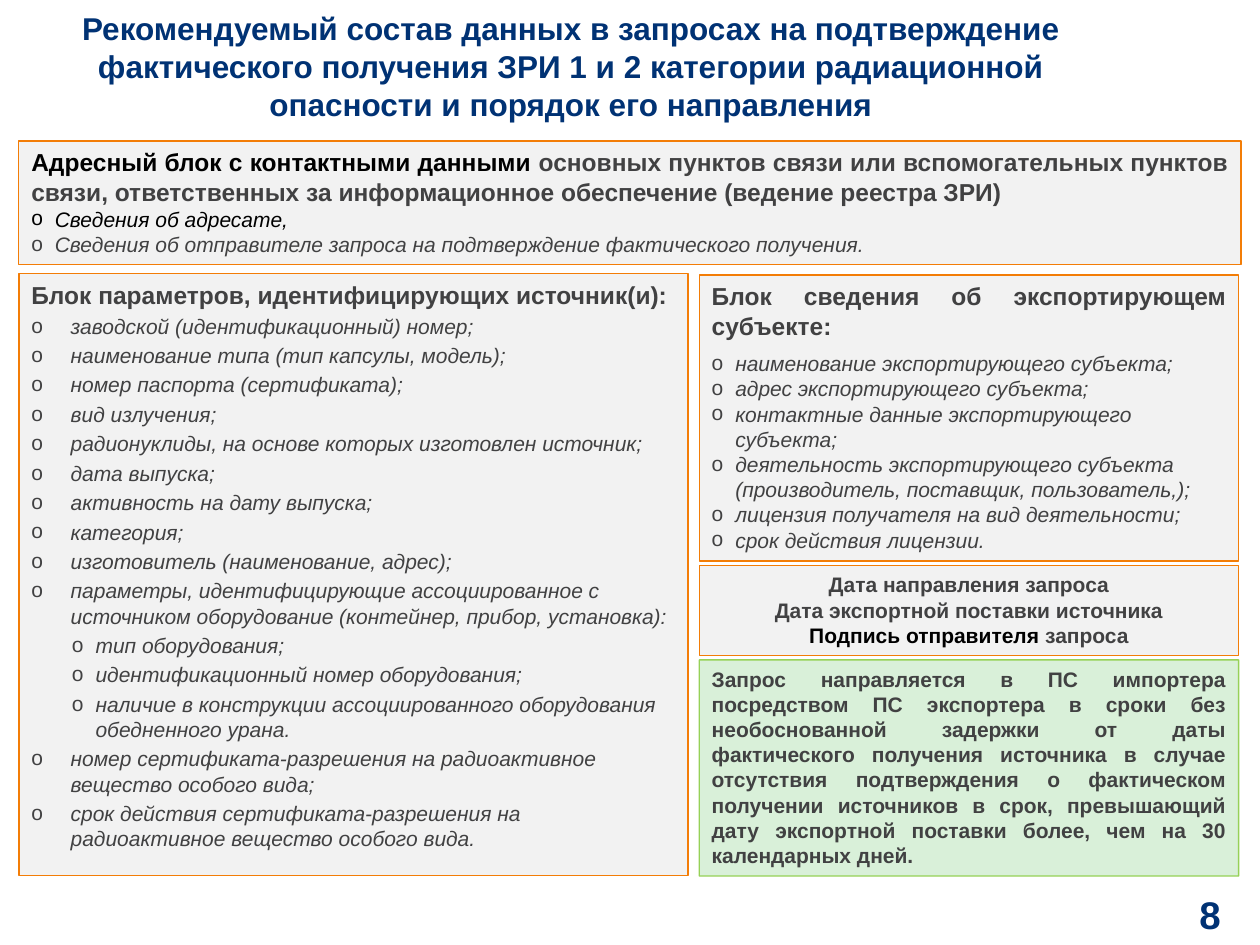
from dataclasses import dataclass
from typing import Optional

from lxml.etree import SubElement
from pptx import Presentation
from pptx.dml.color import RGBColor as RGB
from pptx.enum.shapes import MSO_SHAPE as Shape
from pptx.enum.text import MSO_ANCHOR as Anchor, MSO_AUTO_SIZE as AutoSize, PP_ALIGN as Align
from pptx.oxml.ns import qn
from pptx.util import Pt


@dataclass(frozen=True)
class Theme:
    font: str = "Arial"
    navy: str = "003274"
    black: str = "000000"
    gray: str = "414142"
    panel: str = "F2F2F2"
    orange: str = "F37D07"
    green: str = "5EC25E"
    green_line: str = "92D050"
    title: int = 18
    number: int = 22
    heading: int = 14
    body: int = 12


T = Theme()


@dataclass(frozen=True)
class Run:
    text: str
    color: str = T.gray
    size: int = T.body
    bold: bool = True
    italic: bool = False


@dataclass(frozen=True)
class Para:
    runs: list[Run]
    align: Align = Align.LEFT
    margin: float = 0
    hang: float = 0
    before: float = 0
    after: float = 0


@dataclass(frozen=True)
class Box:
    left: float
    top: float
    width: float
    height: float


@dataclass(frozen=True)
class Panel:
    box: Box
    paras: list[Para]
    fill: str = T.panel
    line: str = T.orange
    fill_alpha: Optional[int] = None
    line_alpha: Optional[int] = None


def item(text: str, margin: float = 13.5, hang: float = 13.5, before: float = 0,
         color: str = T.gray, align: Align = Align.LEFT) -> Para:
    return Para([Run(text, color, bold=False, italic=True)], align, margin, hang, before)


def heading(text: str, align: Align = Align.LEFT, after: float = 0) -> Para:
    return Para([Run(text, size=T.heading)], align, after=after)


def write(tf, paras: list[Para]) -> None:
    for i, para in enumerate(paras):
        p = tf.add_paragraph() if i else tf.paragraphs[0]
        p.alignment = para.align
        if para.before:
            p.space_before = Pt(para.before)
        if para.after:
            p.space_after = Pt(para.after)
        if para.hang:
            pPr = p._p.get_or_add_pPr()
            pPr.set("marL", str(Pt(para.margin)))
            pPr.set("indent", str(-Pt(para.hang)))
            SubElement(pPr, qn("a:buFont")).set("typeface", T.font)
            SubElement(pPr, qn("a:buChar")).set("char", "o")
        for run in para.runs:
            r = p.add_run()
            r.text = run.text
            f = r.font
            f.name, f.size, f.bold, f.italic = T.font, Pt(run.size), run.bold, run.italic
            f.color.rgb = RGB.from_string(run.color)


def place(b: Box) -> tuple:
    return Pt(b.left), Pt(b.top), Pt(b.width), Pt(b.height)


def set_alpha(parent, percent: Optional[int]) -> None:
    if percent is not None:
        color = parent.find(qn("a:solidFill")).find(qn("a:srgbClr"))
        SubElement(color, qn("a:alpha")).set("val", str(percent * 1000))


def add_label(s, box: Box, para: Para) -> None:
    tf = s.shapes.add_textbox(*place(box)).text_frame
    tf.word_wrap = True
    tf.vertical_anchor = Anchor.MIDDLE
    tf.margin_left = tf.margin_right = tf.margin_top = tf.margin_bottom = 0
    write(tf, [para])


def add_panel(s, panel: Panel) -> None:
    sp = s.shapes.add_shape(Shape.RECTANGLE, *place(panel.box))
    sp.shadow.inherit = False
    sp.fill.solid()
    sp.fill.fore_color.rgb = RGB.from_string(panel.fill)
    sp.line.color.rgb = RGB.from_string(panel.line)
    sp.line.width = Pt(0.75)
    spPr = sp._element.spPr
    set_alpha(spPr, panel.fill_alpha)
    set_alpha(spPr.find(qn("a:ln")), panel.line_alpha)
    tf = sp.text_frame
    tf.word_wrap = True
    tf.auto_size = AutoSize.SHAPE_TO_FIT_TEXT
    tf.vertical_anchor = Anchor.TOP
    write(tf, panel.paras)


LEFT, RIGHT, RIGHT_W = 10.8, 399.6, 308.2
GAP = 2.4

SOURCE_ITEMS = [
    "заводской (идентификационный) номер;",
    "наименование типа (тип капсулы, модель);",
    "номер паспорта (сертификата);",
    "вид излучения;",
    "радионуклиды, на основе которых изготовлен источник;",
    "дата выпуска;",
    "активность на дату выпуска;",
    "категория;",
    "изготовитель (наименование, адрес);",
    "параметры, идентифицирующие ассоциированное с источником оборудование (контейнер, прибор, установка):",
]
EQUIPMENT_ITEMS = [
    "тип оборудования;",
    "идентификационный номер оборудования;",
    "наличие в конструкции ассоциированного оборудования обедненного урана.",
]
PERMIT_ITEMS = [
    "номер сертификата-разрешения на радиоактивное вещество особого вида;",
    "срок действия сертификата-разрешения на радиоактивное вещество особого вида.",
]
EXPORTER_ITEMS = [
    "наименование экспортирующего субъекта;",
    "адрес экспортирующего субъекта;",
    "контактные данные экспортирующего субъекта;",
    "деятельность экспортирующего субъекта (производитель, поставщик, пользователь,);",
    "лицензия получателя на вид деятельности;",
    "срок действия лицензии.",
]

PANELS = [
    Panel(Box(LEFT, 80.6, 698.4, 70.6), [
        Para([Run("Адресный блок с контактными данными ", T.black, T.heading),
              Run("основных пунктов связи или вспомогательных пунктов связи, ответственных за "
                  "информационное обеспечение (ведение реестра ЗРИ)", size=T.heading)],
             Align.JUSTIFY),
        item("Сведения об адресате,", color=T.black, align=Align.JUSTIFY),
        item("Сведения об отправителе запроса на подтверждение фактического получения.",
             align=Align.JUSTIFY)]),
    Panel(Box(RIGHT, 157.2, RIGHT_W, 163.4), [
        heading("Блок сведения об экспортирующем субъекте:", Align.JUSTIFY, 6),
        *[item(text) for text in EXPORTER_ITEMS]]),
    Panel(Box(LEFT, 156.2, 382.3, 344.2), [
        heading("Блок параметров, идентифицирующих источник(и):"),
        *[item(text, 22.5, 22.5, GAP) for text in SOURCE_ITEMS],
        *[item(text, 36.75, 13.5, GAP) for text in EQUIPMENT_ITEMS],
        *[item(text, 22.5, 22.5, GAP) for text in PERMIT_ITEMS]]),
    Panel(Box(RIGHT, 323.3, RIGHT_W, 51.1), [
        Para([Run("Дата направления запроса")], Align.CENTER),
        Para([Run("Дата экспортной поставки источника")], Align.CENTER),
        Para([Run("Подпись отправителя ", T.black), Run("запроса")], Align.CENTER)]),
    Panel(Box(RIGHT, 377.1, RIGHT_W, 123.6), [
        Para([Run("Запрос направляется в ПС импортера посредством ПС экспортера в сроки без "
                  "необоснованной задержки от даты фактического получения источника в случае "
                  "отсутствия подтверждения о фактическом получении источников в срок, "
                  "превышающий дату экспортной поставки более, чем на 30 календарных дней.")],
             Align.JUSTIFY)],
        T.green, T.green_line, 23, 94),
]


def main() -> None:
    prs = Presentation()
    prs.slide_width, prs.slide_height = Pt(720), Pt(540)
    s = prs.slides.add_slide(prs.slide_layouts[6])
    add_label(s, Box(20.2, 0, 612, 75.6), Para([Run(
        "Рекомендуемый состав данных в запросах на подтверждение фактического получения "
        "ЗРИ 1 и 2 категории радиационной опасности и порядок его направления",
        T.navy, T.title)], Align.CENTER))
    add_label(s, Box(609.1, 507.6, 88.4, 29.5),
              Para([Run("8", T.navy, T.number)], Align.RIGHT))
    for panel in PANELS:
        add_panel(s, panel)
    prs.save("out.pptx")


if __name__ == "__main__":
    main()
